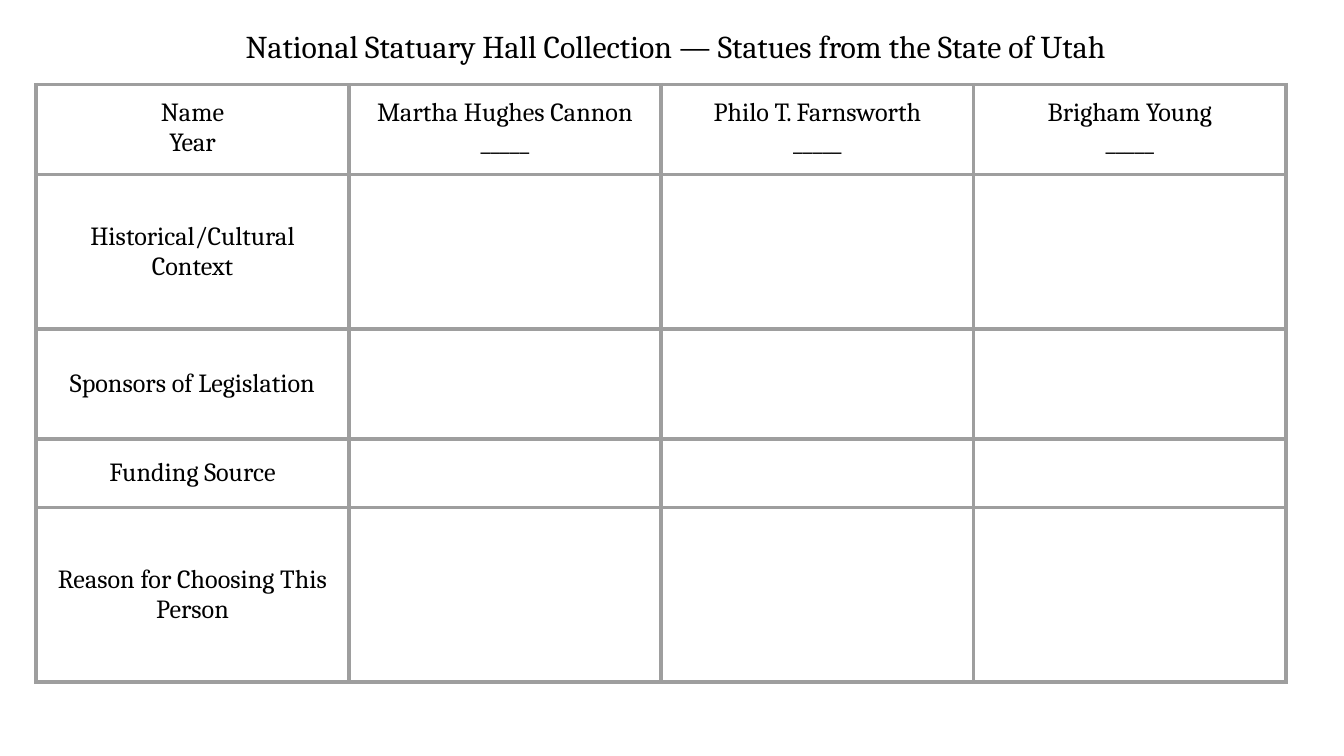
from itertools import product

from lxml.etree import SubElement
from pptx import Presentation
from pptx.dml.color import RGBColor
from pptx.enum.text import MSO_ANCHOR as Anchor, MSO_AUTO_SIZE as AutoSize, PP_ALIGN as Align
from pptx.oxml.ns import qn
from pptx.util import Inches, Pt

FONT = "Cambria"
BLACK, WHITE, GREY = "000000", "FFFFFF", "9E9E9E"
MARGIN = Inches(0.1)
BLANK_YEAR = "_____"
STATUES = ["Martha Hughes Cannon", "Philo T. Farnsworth", "Brigham Young"]
TOPICS = [
    "Historical/Cultural Context",
    "Sponsors of Legislation",
    "Funding Source",
    "Reason for Choosing This Person",
]
ROW_HEIGHTS = [0.63, 1.15, 0.82, 0.51, 1.3]


def color(value):
    """Turn a hex string into a colour."""
    return RGBColor.from_string(value)


def set_text(frame, text, size):
    """Write centred lines of text in the slide's font."""
    frame.word_wrap = True
    frame.text = text
    for paragraph in frame.paragraphs:
        paragraph.alignment = Align.CENTER
        paragraph.font.name = FONT
        paragraph.font.size = Pt(size)
        paragraph.font.color.rgb = color(BLACK)


def set_borders(cell, value, width):
    """Draw a solid line on the four sides of a cell."""
    properties = cell._tc.get_or_add_tcPr()
    for side in ("lnL", "lnR", "lnT", "lnB"):
        line = SubElement(properties, qn(f"a:{side}"), w=str(Pt(width)))
        fill = SubElement(line, qn("a:solidFill"))
        SubElement(fill, qn("a:srgbClr"), val=value)


def add_title(slide, left, top, width, height):
    """Place the slide title in the given box."""
    title = slide.shapes.add_textbox(left, top, width, height)
    frame = title.text_frame
    frame.margin_left = frame.margin_right = MARGIN
    frame.margin_top = frame.margin_bottom = MARGIN
    set_text(frame, "National Statuary Hall Collection — Statues from the State of Utah", 17)
    frame.auto_size = AutoSize.SHAPE_TO_FIT_TEXT


def add_worksheet(slide, left, top, width, height):
    """Place the table of statues by topic in the given box."""
    header = ["Name\nYear"] + [f"{name}\n{BLANK_YEAR}" for name in STATUES]
    rows = [header] + [[topic] + [""] * len(STATUES) for topic in TOPICS]
    table = slide.shapes.add_table(len(rows), len(header), left, top, width, height).table
    table.first_row = table.horz_banding = False
    for column in table.columns:
        column.width = width // len(header)
    for row, share in zip(table.rows, ROW_HEIGHTS):
        row.height = int(height * share / sum(ROW_HEIGHTS))
    for i, j in product(range(len(rows)), range(len(header))):
        cell = table.cell(i, j)
        cell.margin_left = cell.margin_right = MARGIN
        cell.margin_top = cell.margin_bottom = MARGIN
        cell.vertical_anchor = Anchor.MIDDLE if i and not j else Anchor.TOP
        set_text(cell.text_frame, rows[i][j], 14)
        set_borders(cell, GREY, 2.25)
        cell.fill.background()


def main():
    """Build the slide and save it."""
    presentation = Presentation()
    presentation.slide_width = Inches(10)
    presentation.slide_height = presentation.slide_width * 9 // 16
    slide = presentation.slides.add_slide(presentation.slide_layouts[6])
    slide.background.fill.solid()
    slide.background.fill.fore_color.rgb = color(WHITE)
    add_title(slide, Inches(1.36), Inches(0.1), Inches(7.34), Inches(0.49))
    add_worksheet(slide, Inches(0.27), Inches(0.63), Inches(9.3), Inches(sum(ROW_HEIGHTS)))
    presentation.save("out.pptx")


if __name__ == "__main__":
    main()
